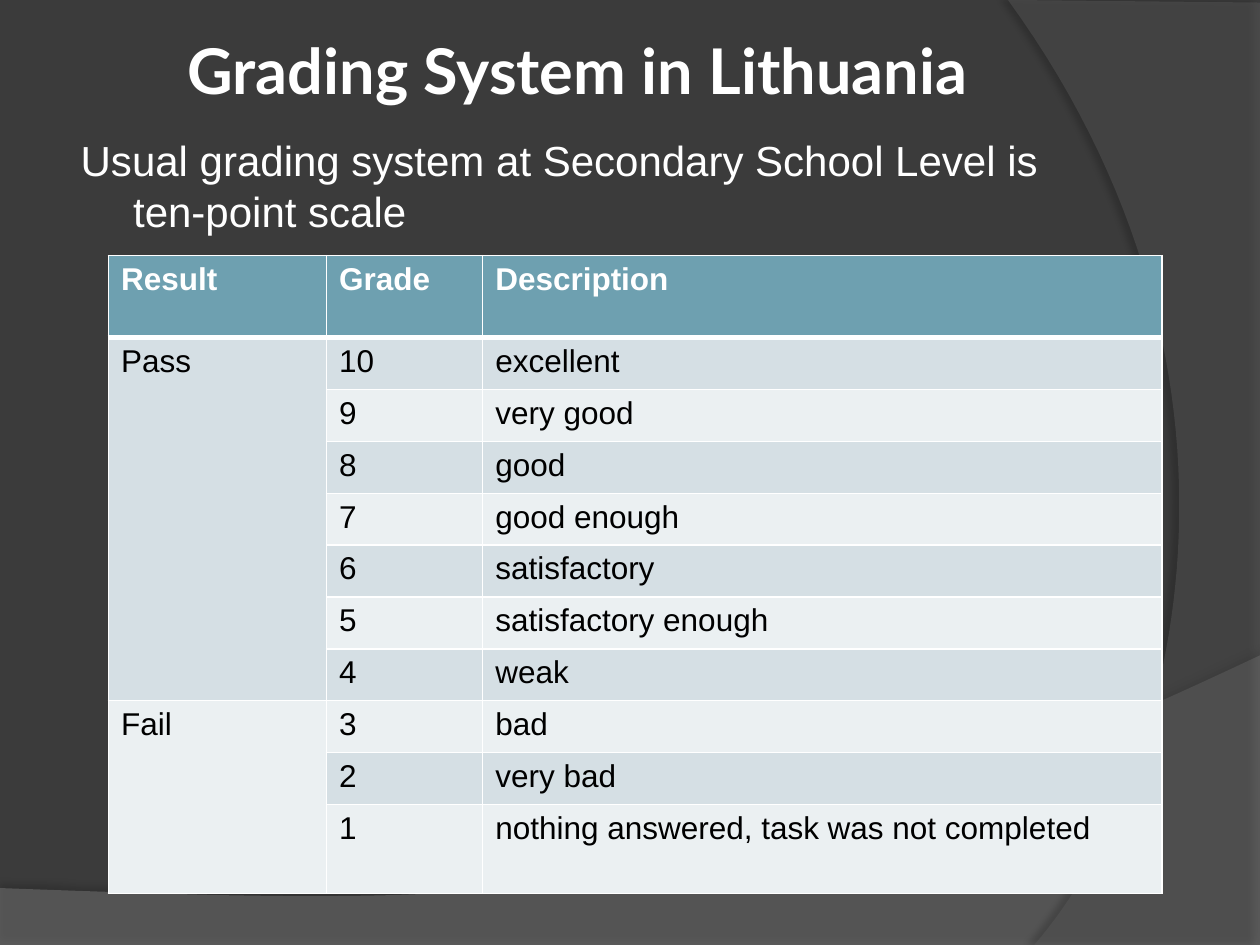
from dataclasses import dataclass

from lxml import etree
from pptx import Presentation
from pptx.dml.color import RGBColor
from pptx.enum.text import MSO_ANCHOR, PP_ALIGN
from pptx.oxml.ns import qn
from pptx.util import Pt

TITLE_ONLY = 5
MIDDLE, TOP = MSO_ANCHOR.MIDDLE, MSO_ANCHOR.TOP
CENTER, LEFT = PP_ALIGN.CENTER, PP_ALIGN.LEFT
WIDTH, HEIGHT = 720, 540


@dataclass(frozen=True)
class Theme:
    background: str = "3B3B3B"
    lower_wave: str = "7F7F7F"
    side_wave: str = "5E5E5E"
    shadow: str = "000000"
    light: str = "FFFFFF"
    dark: str = "000000"
    header: str = "6EA0B0"
    bands: tuple = ("D5DFE4", "EBF0F2")
    title_font: str = "Lato"
    body_font: str = "Arial"
    title_size: int = 36
    body_size: int = 24
    table_size: int = 18


THEME = Theme()
HEADINGS = ("Result", "Grade", "Description")
RESULTS = {
    "Pass": ("excellent", "very good", "good", "good enough",
             "satisfactory", "satisfactory enough", "weak"),
    "Fail": ("bad", "very bad", "nothing answered, task was not completed"),
}
COLUMN_SHARES = (1.73, 1.24, 5.39)
HEADER_HEIGHT, ROW_HEIGHT, LAST_HEIGHT = 47, 29.65, 51


def rgb(value):
    return RGBColor.from_string(value)


def add_node(parent, tag, **attributes):
    node = etree.SubElement(parent, qn(tag))
    for name, value in attributes.items():
        node.set(name, str(value))
    return node


def format_text(para, font, size, color, bold=False, align=LEFT):
    para.alignment = align
    for span in para.runs:
        span.font.name = font
        span.font.size = Pt(size)
        span.font.bold = bold
        span.font.color.rgb = rgb(color)


def curve_points(start, first, second, end, steps=60):
    """Return points along a cubic Bezier curve, without its start."""
    points = []
    for step in range(1, steps + 1):
        t = step / steps
        weights = ((1 - t) ** 3, 3 * t * (1 - t) ** 2, 3 * t * t * (1 - t), t ** 3)
        points.append(tuple(
            sum(weight * value for weight, value in zip(weights, values))
            for values in zip(start, first, second, end)))
    return points


def add_wave(slide, points, color, opacity, shadow_opacity, distance, direction):
    corners = [(Pt(x), Pt(y)) for x, y in points]
    builder = slide.shapes.build_freeform(*corners[0])
    builder.add_line_segments(corners[1:], close=True)
    wave = builder.convert_to_shape()
    wave.line.fill.background()
    wave.fill.solid()
    wave.fill.fore_color.rgb = rgb(color)
    properties = wave.element.spPr
    fill_color = properties.find(qn("a:solidFill")).find(qn("a:srgbClr"))
    add_node(fill_color, "a:alpha", val=opacity * 1000)
    effects = add_node(properties, "a:effectLst")
    shadow = add_node(effects, "a:outerShdw", blurRad=Pt(4), dist=Pt(distance),
                      dir=direction * 60000, algn="ctr", rotWithShape=0)
    shadow_color = add_node(shadow, "a:srgbClr", val=THEME.shadow)
    add_node(shadow_color, "a:alpha", val=shadow_opacity * 1000)


def add_backdrop(slide, width, height):
    slide.background.fill.solid()
    slide.background.fill.fore_color.rgb = rgb(THEME.background)
    crest = (width, 374.5)
    lower = [(0, height), (width, height), crest]
    lower += curve_points(crest, (402.5, 525), (281.5, 517.5), (0, 507.5))
    add_wave(slide, lower, THEME.lower_wave, 45, 35, 3.5, 270)
    foot = (591, height)
    side = [(width, 1.5), (width, height), foot]
    side += curve_points(foot, (673, 445.5), (733, 216), (576, 0))
    add_wave(slide, side, THEME.side_wave, 40, 45, 4, 180)


def place_title(slide, left, top, width, height):
    title = slide.shapes.title
    title.left, title.top, title.width, title.height = map(
        Pt, (left, top, width, height))
    frame = title.text_frame
    frame.text = "Grading System in Lithuania"
    frame.vertical_anchor = MIDDLE
    frame.margin_left = frame.margin_right = Pt(3.6)
    frame.margin_top = frame.margin_bottom = Pt(3.6)
    format_text(frame.paragraphs[0], THEME.title_font, THEME.title_size,
                THEME.light, bold=True, align=CENTER)
    # Bring the title in front of the backdrop.
    title.element.getparent().append(title.element)


def add_intro(slide, left, top, width, height):
    box = slide.shapes.add_textbox(*map(Pt, (left, top, width, height)))
    frame = box.text_frame
    frame.word_wrap = True
    frame.vertical_anchor = TOP
    para = frame.paragraphs[0]
    para.text = ("Usual grading system at Secondary School Level is "
                 "ten-point scale")
    para.space_before = Pt(0.2 * THEME.body_size)
    format_text(para, THEME.body_font, THEME.body_size, THEME.light)
    properties = para._p.get_or_add_pPr()
    properties.set("marL", str(Pt(33)))
    properties.set("indent", str(Pt(-30)))


def format_cell(cell, fill, color, header=False, below_header=False):
    properties = cell._tc.get_or_add_tcPr()
    for side in "LRTB":
        thick = (header and side == "B") or (below_header and side == "T")
        line = add_node(properties, f"a:ln{side}", w=Pt(3 if thick else 1))
        line_fill = add_node(line, "a:solidFill")
        add_node(line_fill, "a:srgbClr", val=THEME.light)
    cell.fill.solid()
    cell.fill.fore_color.rgb = rgb(fill)
    format_text(cell.text_frame.paragraphs[0], THEME.body_font,
                THEME.table_size, color, bold=header)


def add_grade_table(slide, left, top, width):
    descriptions = [text for group in RESULTS.values() for text in group]
    count = len(descriptions)
    heights = [HEADER_HEIGHT] + [ROW_HEIGHT] * (count - 1) + [LAST_HEIGHT]
    box = tuple(map(Pt, (left, top, width, sum(heights))))
    table = slide.shapes.add_table(count + 1, len(HEADINGS), *box).table
    for column, share in zip(table.columns, COLUMN_SHARES):
        column.width = Pt(width * share / sum(COLUMN_SHARES))
    for row, height in zip(table.rows, heights):
        row.height = Pt(height)

    for index, heading in enumerate(HEADINGS):
        table.cell(0, index).text = heading
    for row, description in enumerate(descriptions, start=1):
        table.cell(row, 1).text = str(count + 1 - row)
        table.cell(row, 2).text = description
    first = 1
    for result, group in RESULTS.items():
        last = first + len(group) - 1
        table.cell(first, 0).merge(table.cell(last, 0))
        table.cell(first, 0).text = result
        first = last + 1

    for index, row in enumerate(table.rows):
        for cell in row.cells:
            if index == 0:
                format_cell(cell, THEME.header, THEME.light, header=True)
            else:
                format_cell(cell, THEME.bands[(index - 1) % 2], THEME.dark,
                            below_header=index == 1)


def main():
    deck = Presentation()
    deck.slide_width, deck.slide_height = Pt(WIDTH), Pt(HEIGHT)
    slide = deck.slides.add_slide(deck.slide_layouts[TITLE_ONLY])
    add_backdrop(slide, WIDTH, HEIGHT)
    place_title(slide, 36, 11.5, 588, 56)
    add_intro(slide, 36, 73.5, 588, 409)
    add_grade_table(slide, 62, 146, 602)
    deck.save("out.pptx")


if __name__ == "__main__":
    main()
